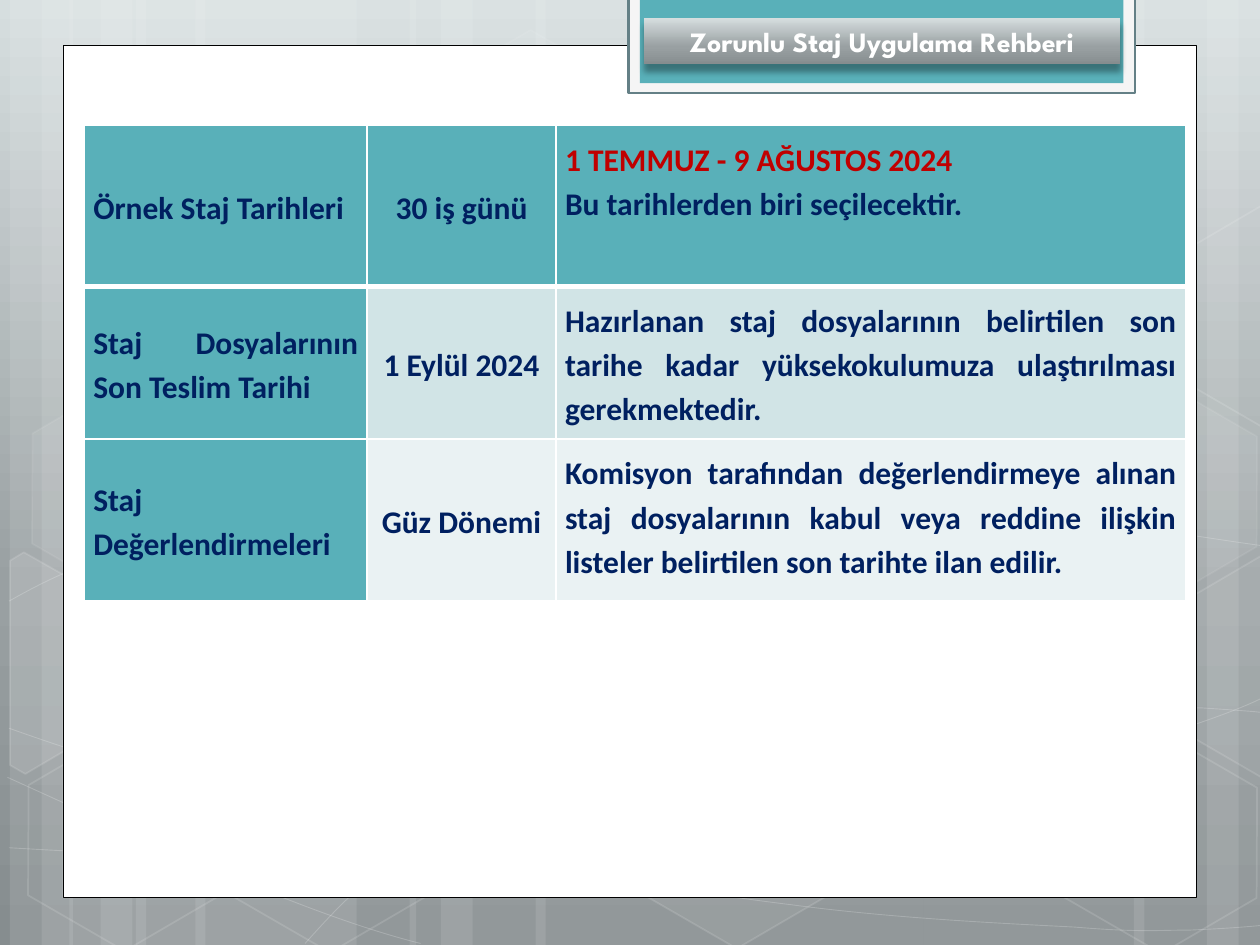
from math import cos, radians, sin

from lxml import etree
from pptx import Presentation
from pptx.dml.color import RGBColor
from pptx.enum.shapes import MSO_SHAPE
from pptx.enum.text import MSO_ANCHOR, MSO_AUTO_SIZE, PP_ALIGN
from pptx.oxml.ns import qn
from pptx.util import Cm, Pt

RECTANGLE, HEXAGON = MSO_SHAPE.RECTANGLE, MSO_SHAPE.HEXAGON
MIDDLE, TOP = MSO_ANCHOR.MIDDLE, MSO_ANCHOR.TOP
FIXED_SIZE = MSO_AUTO_SIZE.NONE
LEFT, CENTER, JUSTIFY = PP_ALIGN.LEFT, PP_ALIGN.CENTER, PP_ALIGN.JUSTIFY

WHITE = RGBColor(0xFF, 0xFF, 0xFF)
BLACK = RGBColor(0x00, 0x00, 0x00)
TEAL = RGBColor(0x59, 0xB0, 0xB9)
PALE_TEAL = RGBColor(0xD1, 0xE4, 0xE6)
PALEST_TEAL = RGBColor(0xEA, 0xF2, 0xF3)
FRAME_GRAY = RGBColor(0xF5, 0xF5, 0xF5)
SLATE = RGBColor(0x64, 0x80, 0x86)
NAVY = RGBColor(0x00, 0x20, 0x60)
RED = RGBColor(0xC0, 0x00, 0x00)
SILVER_STOPS = [
    (0, RGBColor(0xD6, 0xDE, 0xDF)),
    (62, RGBColor(0x99, 0xA0, 0xA2)),
    (100, RGBColor(0x86, 0x8D, 0x8F)),
]
TILT = 30


def set_silver_gradient(fill, owner):
    fill.gradient()
    fill.gradient_angle = 270
    stops = next(owner.iter(qn("a:gsLst")))
    for stop in list(stops):
        stops.remove(stop)
    for position, color in SILVER_STOPS:
        stop = etree.SubElement(stops, qn("a:gs"), pos=str(position * 1000))
        etree.SubElement(stop, qn("a:srgbClr"), val=str(color))


def make_translucent(shape, fill_opacity, line_opacity, line_width=1):
    shape.shadow.inherit = False
    parts = [(shape.fill, fill_opacity, "a:solidFill"),
             (shape.line.fill, line_opacity, "a:ln/a:solidFill")]
    for fill, opacity, location in parts:
        if not opacity:
            fill.background()
            continue
        fill.solid()
        fill.fore_color.rgb = WHITE
        solid = shape._element.spPr.find(location, {"a": etree.QName(qn("a:ln")).namespace})
        etree.SubElement(solid[0], qn("a:alpha"), val=str(opacity * 1000))
    if line_opacity:
        shape.line.width = Pt(line_width)


prs = Presentation()
prs.slide_width, prs.slide_height = Cm(25.4), Cm(19.05)
slide = prs.slides.add_slide(prs.slide_layouts[5])
shapes = slide.shapes
set_silver_gradient(slide.background.fill, slide._element)

stripes = [
    (2.74, 4.45), (0.2, 1.27), (0.84, 2.11), (3.94, 4.45), (1.4, 1.27), (2.03, 2.11),
    (18.62, 4.45), (24.33, 1.27), (22.86, 2.11), (10.8, 7.82), (8.26, 1.27), (8.89, 2.11),
]
for left, width in stripes:
    stripe = shapes.add_shape(RECTANGLE, Cm(left), 0, Cm(width), prs.slide_height)
    make_translucent(stripe, 10, 0)

waves = [
    [(0.18, 17.09), (1.55, 17.17), (2.92, 17.25), (4.83, 17.22), (6.73, 17.2), (9.09, 17.15),
     (11.63, 16.89), (14.17, 16.64), (17.78, 16.15), (20.12, 15.67), (22.43, 15.19),
     (24.82, 14.43), (25.58, 14)],
    [(0.18, 12.12), (0.91, 11.71), (1.65, 11.33), (3.07, 10.95), (4.52, 10.57), (6.58, 10.01),
     (8.81, 9.83), (11.07, 9.65), (13.82, 9.63), (16.61, 9.83), (19.41, 10.03),
     (24.05, 10.82), (25.58, 11.02)],
    [(0.15, 15.67), (3.23, 17.07), (6.27, 18.47), (8.48, 19.02)],
    [(0.18, 14.68), (0.97, 14.96), (1.78, 15.24), (3.25, 15.65), (4.72, 16.03), (6.93, 16.66),
     (9.07, 17.09), (11.18, 17.53), (13.84, 17.98), (15.95, 18.24), (18.06, 18.52),
     (20.32, 18.62), (21.67, 18.69), (22.99, 18.8), (23.34, 18.75), (24, 18.75),
     (24.66, 18.72), (25.12, 18.69), (25.58, 18.64)],
    [(6.15, 19.02), (6.6, 18.52), (7.06, 18.01), (7.67, 17.55), (8.28, 17.09), (9.14, 16.59),
     (9.86, 16.23), (10.57, 15.88), (11, 15.72), (11.94, 15.47), (12.88, 15.21),
     (14.55, 14.86), (15.44, 14.68), (16.36, 14.5), (16.48, 14.5), (17.27, 14.45),
     (18.06, 14.38), (19.3, 14.3), (20.17, 14.27), (21.06, 14.25), (22.5, 14.27),
     (22.5, 14.27), (22.5, 14.27), (24.21, 14.27), (24.21, 14.27), (24.66, 14.3),
     (25.1, 14.33), (25.32, 14.35), (25.55, 14.38), (25.48, 14.35), (25.55, 14.38)],
]
for controls in waves:
    controls = [(Cm(x), Cm(y)) for x, y in controls]
    builder = shapes.build_freeform(*controls[0])
    builder.add_line_segments(controls[1:], close=False)
    wave = builder.convert_to_shape()
    segments = list(wave._element.iter(qn("a:lnTo")))
    outline = segments[0].getparent()
    for start in range(0, len(segments), 3):
        curve = etree.SubElement(outline, qn("a:cubicBezTo"))
        for segment in segments[start:start + 3]:
            curve.append(segment[0])
            outline.remove(segment)
    make_translucent(wave, 0, 20, 0.5)

hexagons = [
    (8.48, 0.91, 4, 8), (12.62, 14.96, 6, 12), (0.28, 15.01, 0, 12), (0.36, 7.92, 7, 8),
    (4.42, 15.04, 0, 12), (19.13, 11.51, 10, 12), (21.18, 15.06, 0, 12), (21.18, 7.98, 7, 8),
]
for left, top, fill_opacity, line_opacity in hexagons:
    hexagon = shapes.add_shape(HEXAGON, Cm(left), Cm(top), Cm(4.45), Cm(3.86))
    hexagon.adjustments[0] = 0.285
    hexagon.rotation = TILT
    make_translucent(hexagon, fill_opacity, line_opacity)

cut_hexagons = [
    (10, (0.91, 13.59), [(0.2, 11.3), (0.48, 11.13), (2.44, 12.24), (2.41, 14.48),
                         (0.51, 15.6), (0.2, 15.42)]),
    (4, (25.02, 13.21), [(23.52, 12.32), (25.43, 11.2), (25.63, 11.33), (25.63, 15.57),
                         (25.45, 15.67), (23.52, 14.55)]),
    (0, (25.02, 6.12), [(23.52, 5.26), (25.43, 4.14), (25.65, 4.27), (25.63, 8.51),
                        (25.45, 8.61), (23.52, 7.49)]),
]
cosine, sine = cos(radians(TILT)), sin(radians(TILT))
for fill_opacity, (cx, cy), corners in cut_hexagons:
    level = [(Cm(cx + (x - cx) * cosine + (y - cy) * sine),
              Cm(cy - (x - cx) * sine + (y - cy) * cosine)) for x, y in corners]
    builder = shapes.build_freeform(*level[0])
    builder.add_line_segments(level[1:], close=True)
    cut_hexagon = builder.convert_to_shape()
    cut_hexagon.rotation = TILT
    make_translucent(cut_hexagon, fill_opacity, 12)

panels = [
    (1.27, 0.91, 22.86, 17.19, WHITE, BLACK, 0.5),
    (12.67, -0.05, 10.21, 1.93, FRAME_GRAY, SLATE, 1.25),
    (12.9, -0.05, 9.75, 1.73, TEAL, None, 0),
]
for left, top, width, height, color, outline, outline_width in panels:
    panel = shapes.add_shape(RECTANGLE, Cm(left), Cm(top), Cm(width), Cm(height))
    panel.shadow.inherit = False
    panel.fill.solid()
    panel.fill.fore_color.rgb = color
    if outline is None:
        panel.line.fill.background()
    else:
        panel.line.color.rgb = outline
        panel.line.width = Pt(outline_width)

title = shapes.title
shapes._spTree.append(title._element)
title.left, title.top, title.width, title.height = Cm(12.98), Cm(0.36), Cm(9.6), Cm(0.94)
set_silver_gradient(title.fill, title._element)
effects = etree.SubElement(title._element.spPr, qn("a:effectLst"))
shadow = etree.SubElement(effects, qn("a:outerShdw"), blurRad=str(Pt(3.5)), dist=str(Pt(4)),
                          dir="5400000", rotWithShape="0")
shadow_color = etree.SubElement(shadow, qn("a:srgbClr"), val=str(BLACK))
etree.SubElement(shadow_color, qn("a:alpha"), val="34000")
title.text_frame.text = "Zorunlu Staj Uygulama Rehberi"
title.text_frame.word_wrap = True
title.text_frame.auto_size = FIXED_SIZE
heading = title.text_frame.paragraphs[0]
heading.alignment = CENTER
heading.font.name, heading.font.size, heading.font.bold = "League Spartan", Pt(16), True
heading.font.color.rgb = WHITE

schedule = [
    ("Örnek Staj Tarihleri", "30 iş günü",
     "1 TEMMUZ - 9 AĞUSTOS 2024\nBu tarihlerden biri seçilecektir."),
    ("Staj Dosyalarının Son Teslim Tarihi", "1 Eylül 2024",
     "Hazırlanan staj dosyalarının belirtilen son tarihe kadar yüksekokulumuza ulaştırılması "
     "gerekmektedir."),
    ("Staj Değerlendirmeleri", "Güz Dönemi",
     "Komisyon tarafından değerlendirmeye alınan staj dosyalarının kabul veya reddine ilişkin "
     "listeler belirtilen son tarihte ilan edilir."),
]
row_colors = [TEAL, PALE_TEAL, PALEST_TEAL]
table = shapes.add_table(3, 3, Cm(1.7), Cm(2.53), Cm(22.2), Cm(8.86)).table
for column, width in zip(table.columns, (5.7, 3.81, 12.69)):
    column.width = Cm(width)
for row, height in zip(table.rows, (3.25, 2.36, 3.25)):
    row.height = Cm(height)

for r, texts in enumerate(schedule):
    for c, text in enumerate(texts):
        cell = table.cell(r, c)
        cell.text = text
        cell.margin_left = cell.margin_right = Cm(0.18)
        cell.margin_top = cell.margin_bottom = Cm(0.2 if c == 2 else 0)
        cell.vertical_anchor = TOP if c == 2 else MIDDLE
        widths = {"a:lnL": 1, "a:lnR": 1, "a:lnT": 3 if r == 1 else 1, "a:lnB": 3 if r == 0 else 1}
        for side, width in widths.items():
            border = etree.SubElement(cell._tc.get_or_add_tcPr(), qn(side), w=str(Pt(width)))
            border_fill = etree.SubElement(border, qn("a:solidFill"))
            etree.SubElement(border_fill, qn("a:srgbClr"), val=str(WHITE))
        cell.fill.solid()
        cell.fill.fore_color.rgb = TEAL if c == 0 else row_colors[r]
        for paragraph in cell.text_frame.paragraphs:
            paragraph.alignment = CENTER if c == 1 else LEFT if r == c == 0 else JUSTIFY
            paragraph.line_spacing = 1.15
            font = paragraph.font
            font.name, font.size, font.bold = "Calibri", Pt(18), True
            font.color.rgb = NAVY
table.cell(0, 2).text_frame.paragraphs[0].font.color.rgb = RED

prs.save("out.pptx")
